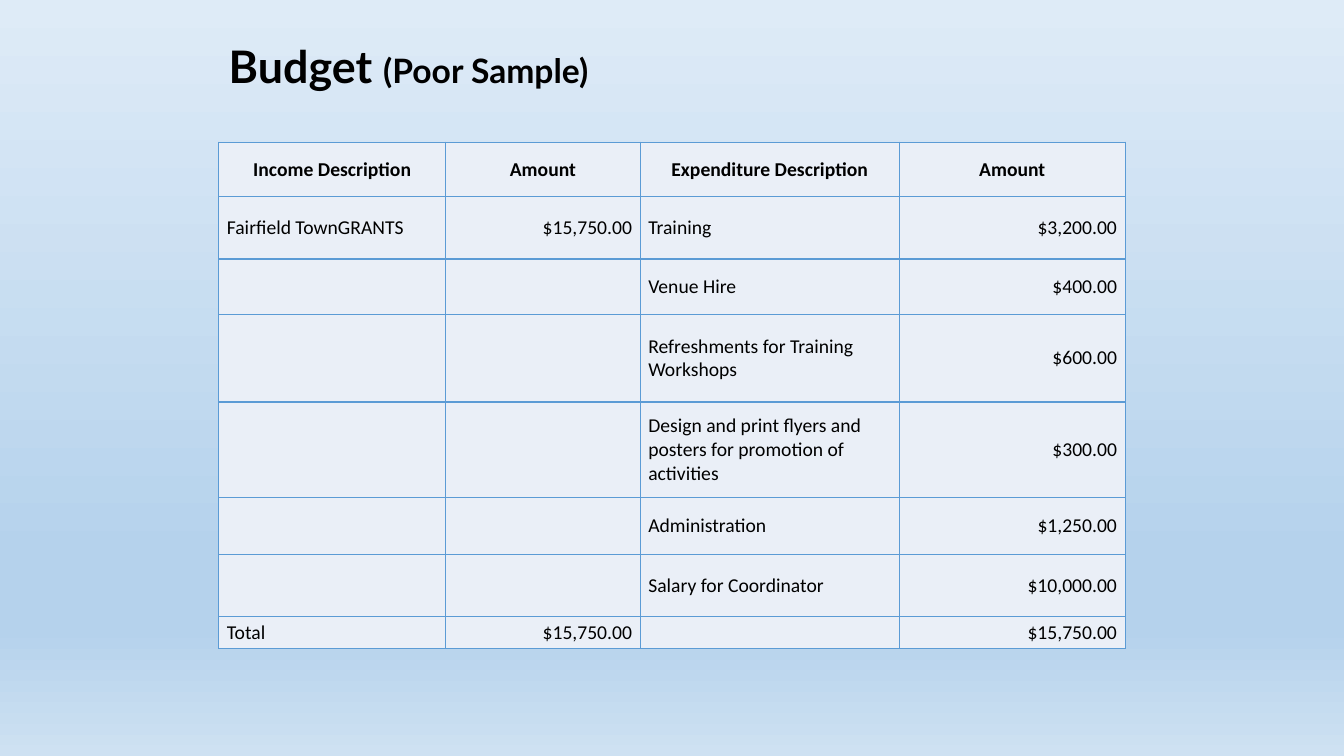
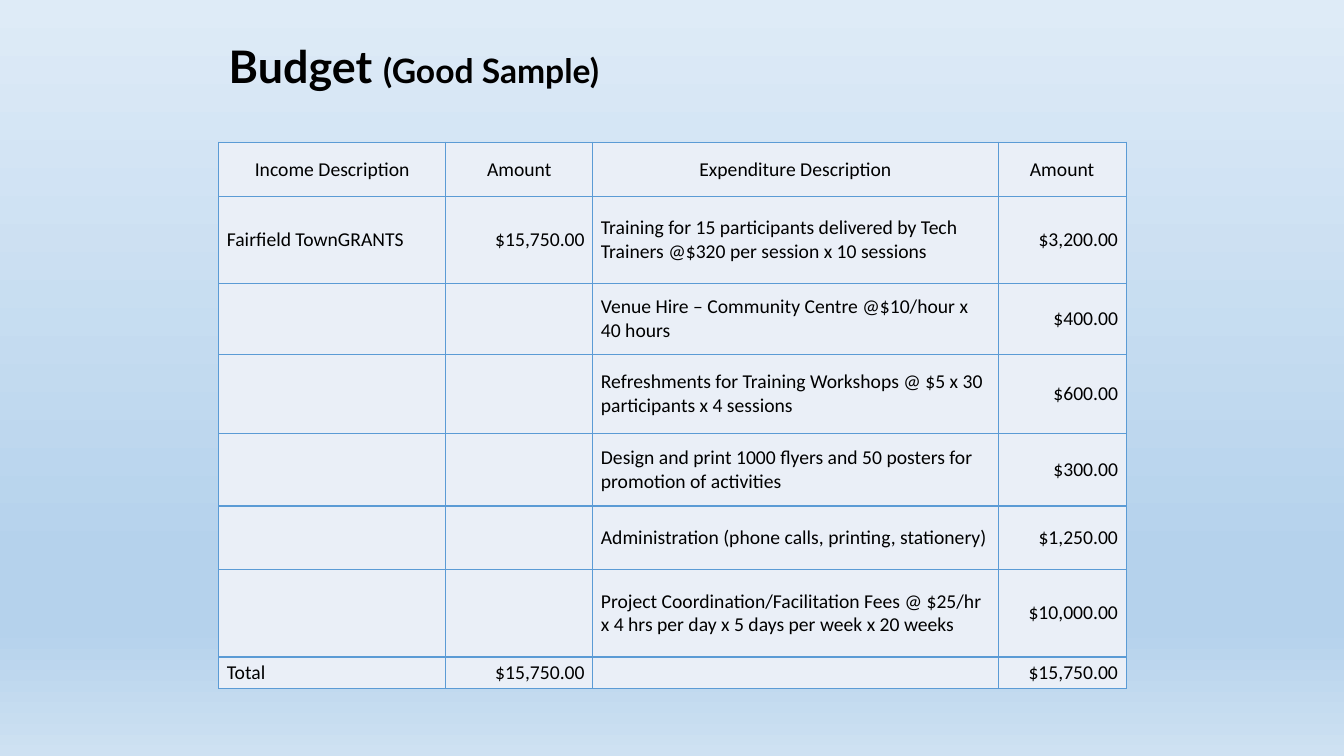
"""Build two budget slides: a poor sample and a good sample."""
from lxml import etree
from pptx import Presentation
from pptx.dml.color import RGBColor
from pptx.enum.text import MSO_ANCHOR, PP_ALIGN
from pptx.oxml.ns import qn
from pptx.util import Inches, Pt

LEFT, CENTER, RIGHT = PP_ALIGN.LEFT, PP_ALIGN.CENTER, PP_ALIGN.RIGHT
MIDDLE = MSO_ANCHOR.MIDDLE

COLORS = {"text": "000000", "cell": "EAEFF7", "border": "5B9BD5"}
GRADIENT = [(0, "DEEBF7"), (74, "B5D2EC"), (83, "B5D2EC"), (100, "CEE1F2")]
TITLE_FONT, TABLE_FONT = "Lato", "Calibri"
TABLE_SIZE = 14
LEFT_EDGE, CONTENT_WIDTH = 2.17, 9
TITLE_TOP, TITLE_HEIGHT, TABLE_TOP = 0.3, 0.77, 1.41
CELL_MARGIN_X, CELL_MARGIN_Y = 0.08, 0.04

HEADER = ("Income Description", "Amount", "Expenditure Description", "Amount")
GRANT = ("Fairfield TownGRANTS", "$15,750.00")
TOTAL = ("Total", "$15,750.00", "", "$15,750.00")
AMOUNTS = ("$3,200.00", "$400.00", "$600.00", "$300.00", "$1,250.00", "$10,000.00")

BUDGETS = [
    {
        "label": "(Poor Sample)",
        "bold_header": True,
        "cols": (2.25, 1.93, 2.57, 2.24),
        "rows": (0.54, 0.62, 0.55, 0.87, 0.95, 0.56, 0.62, 0.31),
        "expenses": (
            "Training",
            "Venue Hire",
            "Refreshments for Training Workshops",
            "Design and print flyers and posters for promotion of activities",
            "Administration",
            "Salary for Coordinator",
        ),
    },
    {
        "label": "(Good Sample)",
        "bold_header": False,
        "cols": (2.25, 1.46, 4.02, 1.27),
        "rows": (0.54, 0.86, 0.71, 0.78, 0.72, 0.63, 0.87, 0.31),
        "expenses": (
            "Training for 15 participants delivered by Tech Trainers @$320 per session x 10 sessions",
            "Venue Hire – Community Centre @$10/hour x 40 hours",
            "Refreshments for Training Workshops @ $5 x 30 participants x 4 sessions",
            "Design and print 1000 flyers and 50 posters for promotion of activities",
            "Administration (phone calls, printing, stationery)",
            "Project Coordination/Facilitation Fees @ $25/hr x 4 hrs per day x 5 days per week x 20 weeks",
        ),
    },
]


def set_background(master):
    fill = master.background.fill
    fill.gradient()
    fill.gradient_angle = 270
    stops = master._element.find(".//" + qn("p:bgPr")).find(".//" + qn("a:gsLst"))
    for stop in list(stops):
        stops.remove(stop)
    for position, color in GRADIENT:
        stop = etree.SubElement(stops, qn("a:gs"), pos=str(position * 1000))
        etree.SubElement(stop, qn("a:srgbClr"), val=color)


def format_run(r, font, size, bold):
    r.font.name = font
    r.font.size = Pt(size)
    r.font.bold = bold
    r.font.color.rgb = RGBColor.from_string(COLORS["text"])


def add_title(slide, label):
    box = slide.shapes.add_textbox(Inches(LEFT_EDGE), Inches(TITLE_TOP),
                                   Inches(CONTENT_WIDTH), Inches(TITLE_HEIGHT))
    tf = box.text_frame
    tf.word_wrap = True
    tf.vertical_anchor = MIDDLE
    p = tf.paragraphs[0]
    p.line_spacing = 0.9
    for text, size in (("Budget ", 32), (label, 24)):
        r = p.add_run()
        r.text = text
        format_run(r, TITLE_FONT, size, True)


def set_borders(cell):
    props = cell._tc.get_or_add_tcPr()
    for side in ("a:lnL", "a:lnR", "a:lnT", "a:lnB"):
        line = etree.SubElement(props, qn(side), w=str(Pt(1)))
        fill = etree.SubElement(line, qn("a:solidFill"))
        etree.SubElement(fill, qn("a:srgbClr"), val=COLORS["border"])


def fill_cell(cell, text, align, bold):
    set_borders(cell)
    cell.fill.solid()
    cell.fill.fore_color.rgb = RGBColor.from_string(COLORS["cell"])
    cell.margin_left = cell.margin_right = Inches(CELL_MARGIN_X)
    cell.margin_top = cell.margin_bottom = Inches(CELL_MARGIN_Y)
    cell.vertical_anchor = MIDDLE
    p = cell.text_frame.paragraphs[0]
    p.alignment = align
    if text:
        p.text = text
        format_run(p.runs[0], TABLE_FONT, TABLE_SIZE, bold)
    else:
        etree.SubElement(p._p, qn("a:endParaRPr"), sz=str(TABLE_SIZE * 100))


def add_budget_table(slide, budget):
    cols, rows = budget["cols"], budget["rows"]
    incomes = [GRANT] + [("", "")] * (len(AMOUNTS) - 1)
    lines = [income + expense for income, expense
             in zip(incomes, zip(budget["expenses"], AMOUNTS))]
    table = slide.shapes.add_table(len(rows), len(cols), Inches(LEFT_EDGE), Inches(TABLE_TOP),
                                   Inches(sum(cols)), Inches(sum(rows))).table
    table.first_row = table.horz_banding = False
    for column, width in zip(table.columns, cols):
        column.width = Inches(width)
    for row, height in zip(table.rows, rows):
        row.height = Inches(height)
    for i, line in enumerate([HEADER, *lines, TOTAL]):
        is_header = i == 0
        for j, text in enumerate(line):
            align = CENTER if is_header else RIGHT if j % 2 else LEFT
            fill_cell(table.cell(i, j), text, align, is_header and budget["bold_header"])


def main():
    prs = Presentation()
    prs.slide_width, prs.slide_height = Inches(13.33), Inches(7.5)
    set_background(prs.slide_master)
    for budget in BUDGETS:
        slide = prs.slides.add_slide(prs.slide_layouts[6])
        add_title(slide, budget["label"])
        add_budget_table(slide, budget)
    prs.save("out.pptx")


if __name__ == "__main__":
    main()
